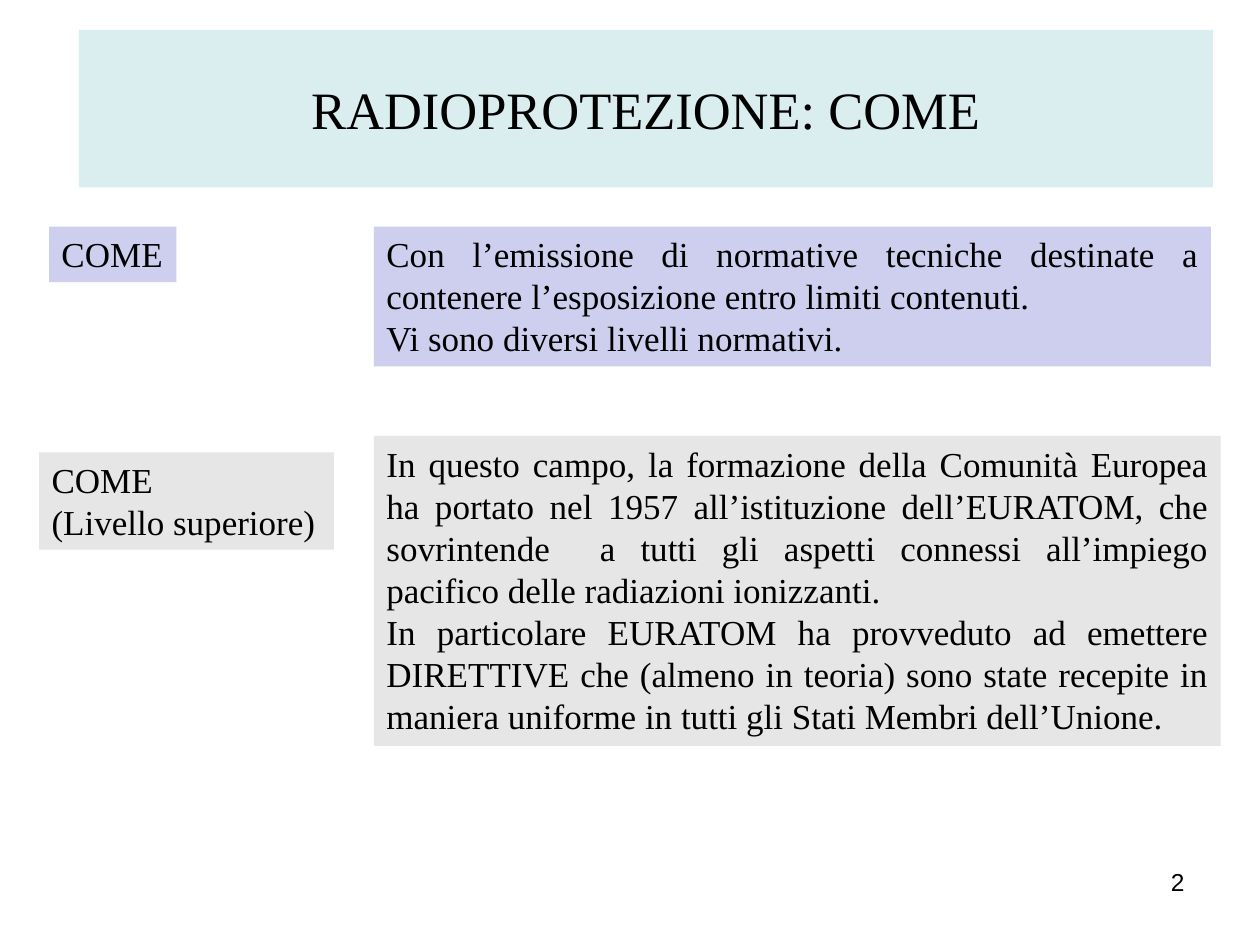
import pptx
import pptx.dml.color
import pptx.enum.text
import pptx.util
from pptx.enum.text import MSO_ANCHOR, MSO_AUTO_SIZE, PP_ALIGN
from pptx.util import Cm

BLACK = pptx.dml.color.RGBColor(0x00, 0x00, 0x00)
AQUA = pptx.dml.color.RGBColor(0xDA, 0xED, 0xEF)
LILAC = pptx.dml.color.RGBColor(0xCE, 0xCE, 0xEF)
GREY = pptx.dml.color.RGBColor(0xE6, 0xE6, 0xE6)

SERIF = "Times New Roman"
TEXT_LEFT = 7.54


def place(shape, left, top, width, height):
    shape.left, shape.top = Cm(left), Cm(top)
    shape.width, shape.height = Cm(width), Cm(height)


def fill_with(shape, colour):
    shape.fill.solid()
    shape.fill.fore_color.rgb = colour


def write(shape, text, size, align, font=SERIF):
    """Set the text, one paragraph per line, and format every run."""
    shape.text_frame.text = text
    for para in shape.text_frame.paragraphs:
        para.alignment = align
        for run in para.runs:
            run.font.name = font
            run.font.size = pptx.util.Pt(size)
            run.font.color.rgb = BLACK


def add_title(page, text):
    title = page.shapes.title
    place(title, 1.59, 0.6, 22.86, 3.18)
    fill_with(title, AQUA)
    write(title, text, 30, PP_ALIGN.CENTER)
    title.text_frame.vertical_anchor = MSO_ANCHOR.MIDDLE
    title.text_frame.auto_size = MSO_AUTO_SIZE.NONE


def add_panel(page, bounds, colour, text, align=PP_ALIGN.JUSTIFY, wrap=True):
    panel = page.shapes.add_textbox(0, 0, 0, 0)
    place(panel, *bounds)
    fill_with(panel, colour)
    write(panel, text, 20, align)
    panel.text_frame.word_wrap = wrap
    panel.text_frame.auto_size = MSO_AUTO_SIZE.SHAPE_TO_FIT_TEXT


def add_page_number(page, number):
    box = page.shapes.add_textbox(0, 0, 0, 0)
    place(box, 18.2, 17.35, 5.93, 1.32)
    write(box, number, 14, PP_ALIGN.RIGHT, "Arial")
    box.text_frame.word_wrap = True


def main():
    deck = pptx.Presentation()
    deck.slide_width, deck.slide_height = Cm(25.4), Cm(19.05)
    page = deck.slides.add_slide(deck.slide_layouts.get_by_name("Title Only"))

    add_title(page, "RADIOPROTEZIONE: COME")
    add_panel(page, (0.99, 4.57, 2.57, 1.12), LILAC, "COME", PP_ALIGN.LEFT, wrap=False)
    add_panel(
        page, (TEXT_LEFT, 4.57, 16.87, 2.82), LILAC,
        "Con l’emissione di normative tecniche destinate a contenere "
        "l’esposizione entro limiti contenuti.\n"
        "Vi sono diversi livelli normativi.")
    add_panel(page, (0.79, 9.12, 5.94, 1.96), GREY,
              "COME\n(Livello superiore)", PP_ALIGN.LEFT)
    add_panel(
        page, (TEXT_LEFT, 8.79, 17.07, 6.25), GREY,
        "In questo campo, la formazione della Comunità Europea ha portato nel "
        "1957 all’istituzione dell’EURATOM, che sovrintende  a tutti gli aspetti "
        "connessi all’impiego pacifico delle radiazioni ionizzanti.\n"
        "In particolare EURATOM ha provveduto ad emettere DIRETTIVE che (almeno "
        "in teoria) sono state recepite in maniera uniforme in tutti gli Stati "
        "Membri dell’Unione.")
    add_page_number(page, "2")

    deck.save("out.pptx")


if __name__ == "__main__":
    main()
